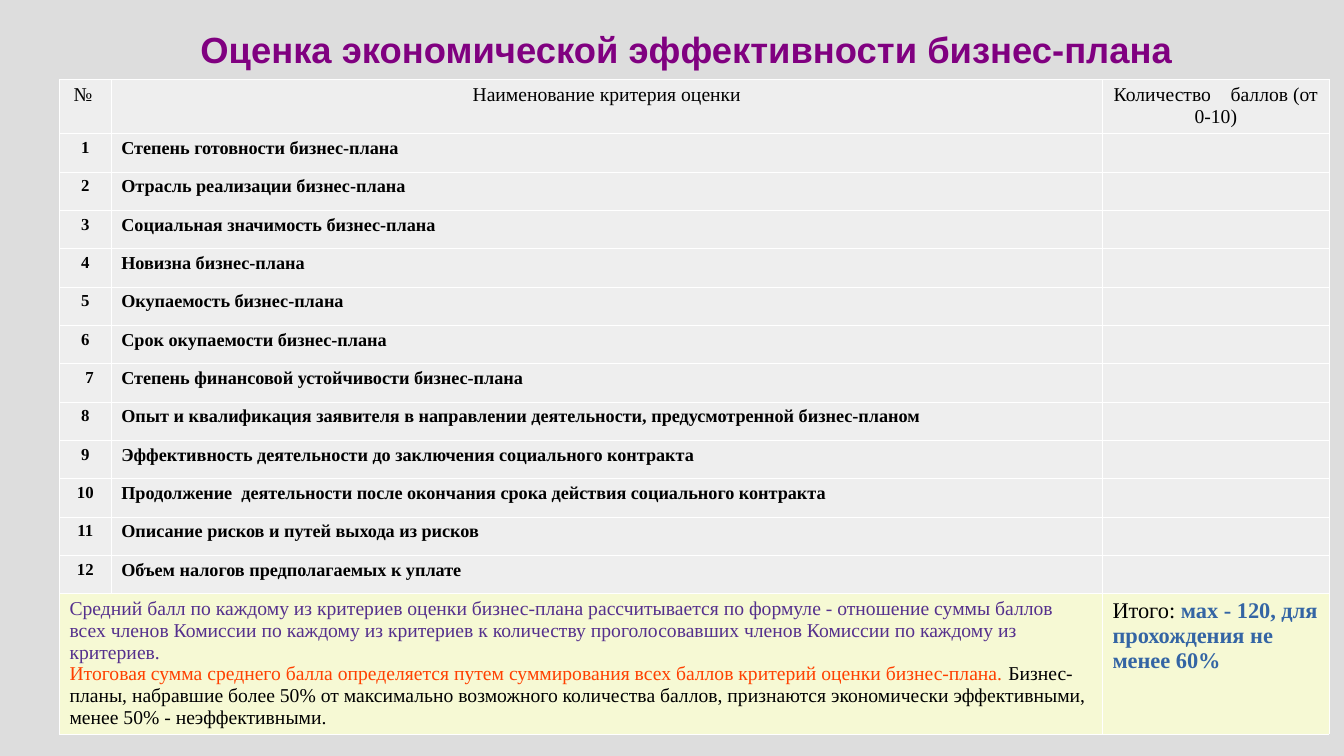
import pptx
import pptx.dml.color
import pptx.enum.text
import pptx.oxml
import pptx.oxml.ns
import pptx.util

Pt = pptx.util.Pt
ALIGN = pptx.enum.text.PP_ALIGN
COLORS = {
    "background": "DDDDDD", "title": "800080", "row": "EEEEEE", "total": "F6F9D4",
    "text": "000000", "formula": "55308D", "sum": "FF4000", "result": "3465A4",
    "border": "FFFFFF",
}
CRITERIA = [
    "Степень готовности бизнес-плана",
    "Отрасль реализации бизнес-плана",
    "Социальная значимость бизнес-плана",
    "Новизна бизнес-плана",
    "Окупаемость бизнес-плана",
    "Срок окупаемости бизнес-плана",
    "Степень финансовой устойчивости бизнес-плана",
    "Опыт и квалификация заявителя в направлении деятельности, предусмотренной бизнес-планом",
    "Эффективность деятельности до заключения социального контракта",
    "Продолжение  деятельности после окончания срока действия социального контракта",
    "Описание рисков и путей выхода из рисков",
    "Объем налогов предполагаемых к уплате",
]
JUSTIFIED = {6, 8, 9, 10}
COL_WIDTHS = [37, 708, 162]
ROW_HEIGHTS = [38.6] + [27.4] * len(CRITERIA) + [100.7]
FORMULA = ("Средний балл по каждому из критериев оценки бизнес-плана рассчитывается по "
           "формуле - отношение суммы баллов всех членов Комиссии по каждому из критериев "
           "к количеству проголосовавших членов Комиссии по каждому из критериев.")
SUM = ("Итоговая сумма среднего балла определяется путем суммирования всех баллов "
       "критерий оценки бизнес-плана. ")
THRESHOLD = ("Бизнес-планы, набравшие более 50% от максимально возможного количества "
             "баллов, признаются экономически эффективными, менее 50% - неэффективными.")


def rgb(name):
    return pptx.dml.color.RGBColor.from_string(COLORS[name])


class SlideBuilder:
    font = "Times New Roman"

    def __init__(self, prs):
        self.slide = prs.slides.add_slide(prs.slide_layouts[5])
        fill = self.slide.background.fill
        fill.solid()
        fill.fore_color.rgb = rgb("background")

    def style(self, r, size, color="text", bold=False, font=None):
        r.font.name = font or self.font
        r.font.size = Pt(size)
        r.font.bold = bold
        r.font.color.rgb = rgb(color)

    def title(self, text, left, top, width, height):
        sp = self.slide.shapes.title
        sp.left, sp.top, sp.width, sp.height = Pt(left), Pt(top), Pt(width), Pt(height)
        tf = sp.text_frame
        tf.text = text
        tf.word_wrap = True
        tf.auto_size = pptx.enum.text.MSO_AUTO_SIZE.NONE
        tf.vertical_anchor = pptx.enum.text.MSO_ANCHOR.MIDDLE
        tf.margin_left = tf.margin_top = tf.margin_right = tf.margin_bottom = 0
        p = tf.paragraphs[0]
        p.alignment = ALIGN.CENTER
        self.style(p.runs[0], 26, "title", True, "Arial")

    def table(self, left, top, widths, heights):
        frame = self.slide.shapes.add_table(
            len(heights), len(widths), Pt(left), Pt(top), Pt(sum(widths)), Pt(sum(heights)))
        table = frame.table
        for column, width in zip(table.columns, widths):
            column.width = Pt(width)
        for row, height in zip(table.rows, heights):
            row.height = Pt(height)
        for cell in table.iter_cells():
            self.border(cell)
        return table

    def border(self, cell):
        tc_pr = cell._tc.get_or_add_tcPr()
        for side in ("lnL", "lnR", "lnT", "lnB"):
            tc_pr.append(pptx.oxml.parse_xml(
                f'<a:{side} {pptx.oxml.ns.nsdecls("a")} w="{Pt(0.06)}"><a:solidFill>'
                f'<a:srgbClr val="{COLORS["border"]}"/></a:solidFill></a:{side}>'))

    def cell(self, cell, paragraphs, fill="row", align=ALIGN.LEFT):
        """Each paragraph is a list of (text, size, color, bold) runs."""
        cell.fill.solid()
        cell.fill.fore_color.rgb = rgb(fill)
        tf = cell.text_frame
        for i, runs in enumerate(paragraphs):
            p = tf.add_paragraph() if i else tf.paragraphs[0]
            p.alignment = align
            for text, *style in runs:
                r = p.add_run()
                r.text = text
                self.style(r, *style)

    def empty_cell(self, cell):
        """Small text size keeps the empty line from stretching the row."""
        self.cell(cell, [])
        cell.text_frame.paragraphs[0]._p.get_or_add_endParaRPr().set("sz", "1200")


def main():
    prs = pptx.Presentation()
    prs.slide_width, prs.slide_height = Pt(960), Pt(540)
    s = SlideBuilder(prs)
    s.title("Оценка экономической эффективности бизнес-плана", 22.3, 13.7, 936.7, 42.5)

    table = s.table(42.5, 56.7, COL_WIDTHS, ROW_HEIGHTS)
    headers = ["№ ", "Наименование критерия оценки", "Количество    баллов (от 0-10)"]
    for col, text in enumerate(headers):
        s.cell(table.cell(0, col), [[(text, 14)]], align=ALIGN.CENTER)

    for number, criterion in enumerate(CRITERIA, 1):
        s.cell(table.cell(number, 0), [[(str(number), 12, "text", True)]], align=ALIGN.CENTER)
        s.cell(table.cell(number, 1), [[(criterion, 13, "text", True)]],
               align=ALIGN.JUSTIFY if number in JUSTIFIED else ALIGN.LEFT)
        s.empty_cell(table.cell(number, 2))
    table.cell(7, 0).margin_left = Pt(13.2)

    last = len(ROW_HEIGHTS) - 1
    table.cell(last, 0).merge(table.cell(last, 1))
    s.cell(table.cell(last, 0),
           [[(FORMULA, 14, "formula")], [(SUM, 14, "sum"), (THRESHOLD, 14)]], "total")
    s.cell(table.cell(last, 2),
           [[("Итого: ", 16), ("мах - 120, для прохождения не менее 60%", 16, "result", True)]],
           "total")
    prs.save("out.pptx")


if __name__ == "__main__":
    main()
